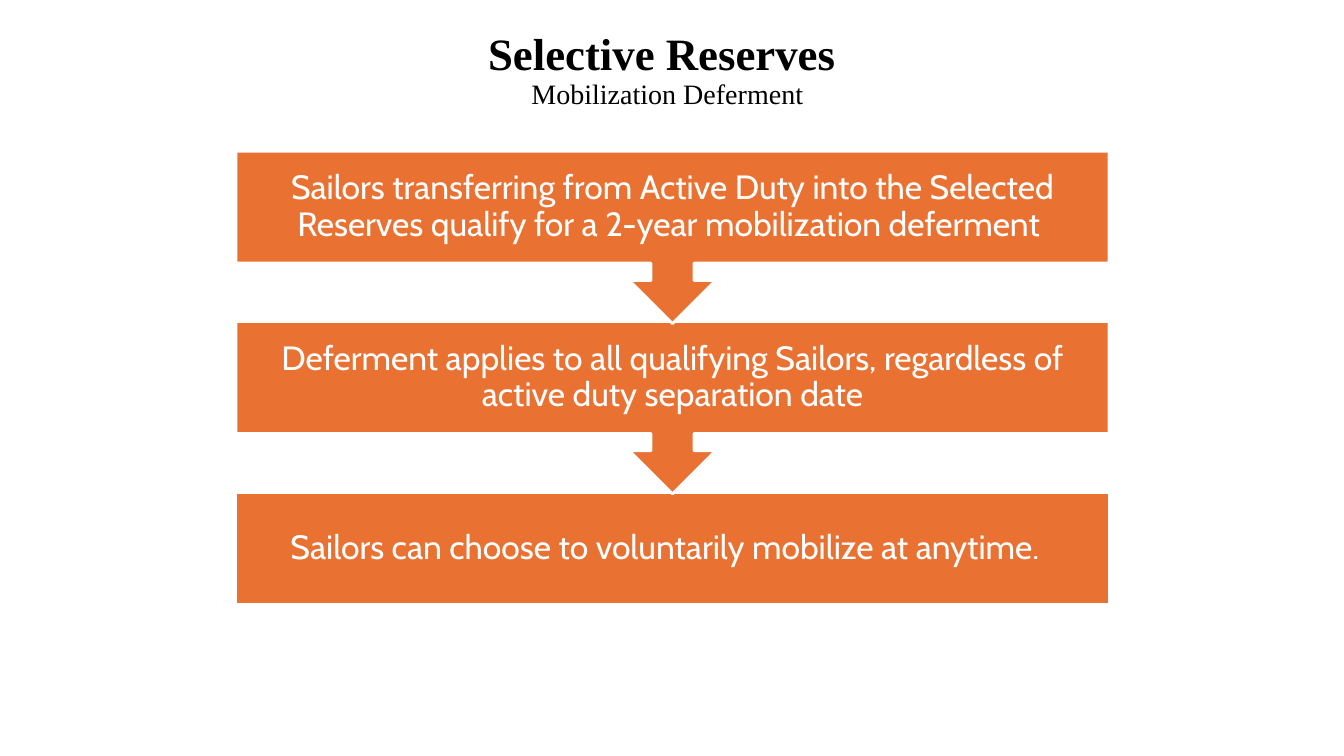
import pptx
import pptx.dml.color
import pptx.enum.shapes
import pptx.enum.text
import pptx.util

Inches = pptx.util.Inches
Shape = pptx.enum.shapes.MSO_SHAPE
ORANGE = pptx.dml.color.RGBColor(0xE9, 0x71, 0x32)
WHITE = pptx.dml.color.RGBColor(0xFF, 0xFF, 0xFF)
BLACK = pptx.dml.color.RGBColor(0x00, 0x00, 0x00)


def add_text(para, text, font, size, color, bold=False):
    para.alignment = pptx.enum.text.PP_ALIGN.CENTER
    para.line_spacing = 0.9
    span = para.add_run()
    span.text = text
    span.font.name = font
    span.font.size = pptx.util.Pt(size)
    span.font.bold = bold
    span.font.color.rgb = color


deck = pptx.Presentation()
deck.slide_width = Inches(13.33)
deck.slide_height = Inches(7.5)
page = deck.slides.add_slide(deck.slide_layouts[6])

# Steps, drawn from the last up so each arrow tip lies over the next box
steps = [
    (4.89, 1.11, Shape.RECTANGLE, "Sailors can choose to voluntarily mobilize at anytime.  "),
    (3.19, 1.71, Shape.DOWN_ARROW_CALLOUT,
     "Deferment applies to all qualifying Sailors, regardless of active duty separation date"),
    (1.5, 1.71, Shape.DOWN_ARROW_CALLOUT,
     "Sailors transferring from Active Duty into the Selected Reserves "
     "qualify for a 2-year mobilization deferment "),
]
for top, height, kind, text in steps:
    box = page.shapes.add_shape(kind, Inches(2.34), Inches(top), Inches(8.66), Inches(height))
    box.shadow.inherit = False
    box.fill.solid()
    box.fill.fore_color.rgb = ORANGE
    box.line.color.rgb = WHITE
    box.line.width = pptx.util.Pt(2)
    frame = box.text_frame
    frame.word_wrap = True
    frame.vertical_anchor = pptx.enum.text.MSO_ANCHOR.MIDDLE
    frame.margin_left = frame.margin_right = Inches(0.19)
    frame.margin_top = frame.margin_bottom = Inches(0.19)
    add_text(frame.paragraphs[0], text, font="Cabin", size=24, color=WHITE)

# Title and subtitle
title = page.shapes.add_textbox(Inches(0), Inches(0.01), Inches(13.24), Inches(1.39))
title.text_frame.word_wrap = True
title.text_frame.vertical_anchor = pptx.enum.text.MSO_ANCHOR.MIDDLE
para = title.text_frame.paragraphs[0]
add_text(para, "Selective Reserves ", font="Times New Roman", size=32, color=BLACK, bold=True)
para.add_line_break()
add_text(para, "Mobilization Deferment", font="Times New Roman", size=20, color=BLACK)

deck.save("out.pptx")
